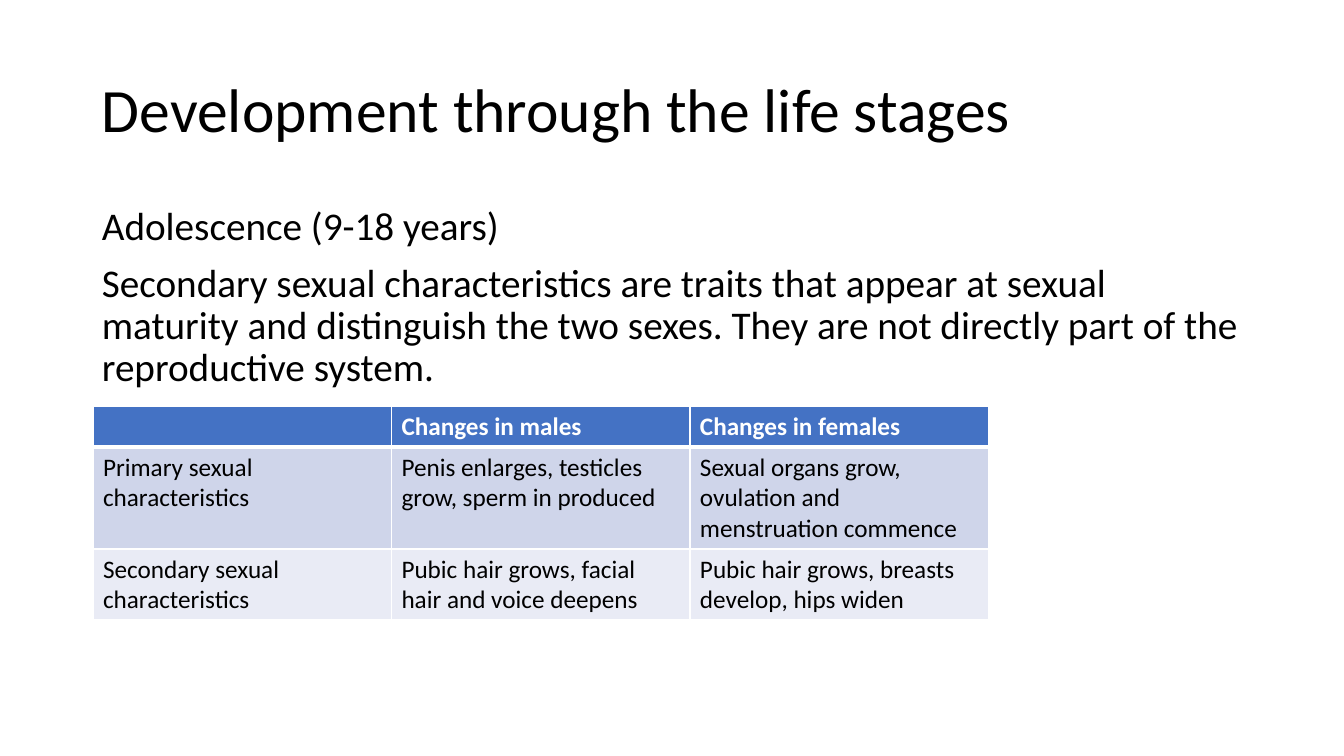
"""Build the slide on adolescence and the changes it brings."""
from dataclasses import dataclass

from lxml import etree
from pptx import Presentation
from pptx import util as u
from pptx.dml.color import RGBColor
from pptx.enum import text
from pptx.oxml.ns import qn


@dataclass(frozen=True)
class Theme:
    font: str = "Calibri"
    ink: str = "000000"
    white: str = "FFFFFF"
    header: str = "4472C4"
    bands: tuple = ("CFD5EA", "E9EBF5")
    title_size: int = 44
    body_size: int = 28
    table_size: int = 18


THEME = Theme()
PX = 914400 / 100.8


def style_text(frame, size, color, bold=False):
    for paragraph in frame.paragraphs:
        for run in paragraph.runs:
            run.font.name = THEME.font
            run.font.size = u.Pt(size)
            run.font.bold = bold
            run.font.color.rgb = RGBColor.from_string(color)


def add_border(cell, side, points):
    line = etree.Element(qn(f"a:{side}"), w=str(u.Pt(points)))
    fill = etree.SubElement(line, qn("a:solidFill"))
    etree.SubElement(fill, qn("a:srgbClr"), val=THEME.white)
    properties = cell._tc.get_or_add_tcPr()
    properties.insert(len(properties) - 1, line)


prs = Presentation()
prs.slide_width = round(1344 * PX)
prs.slide_height = round(756 * PX)
slide = prs.slides.add_slide(prs.slide_layouts[6])

passages = [
    (40, 146, THEME.title_size, 0, text.MSO_ANCHOR.MIDDLE,
     ["Development through the life stages"]),
    (202, 480, THEME.body_size, 10, text.MSO_ANCHOR.TOP,
     ["Adolescence (9-18 years)",
      "Secondary sexual characteristics are traits that appear at sexual "
      "maturity and distinguish the two sexes. They are not directly part "
      "of the reproductive system."]),
]
for top, height, size, space_before, anchor, paragraphs in passages:
    passage = slide.shapes.add_textbox(
        *(round(n * PX) for n in (92, top, 1159, height)))
    frame = passage.text_frame
    frame.word_wrap = True
    frame.vertical_anchor = anchor
    frame.text = "\n".join(paragraphs)
    for paragraph in frame.paragraphs:
        paragraph.line_spacing = 0.9
        paragraph.space_before = u.Pt(space_before)
    style_text(frame, size, THEME.ink)

changes = [
    ["", "Changes in males", "Changes in females"],
    ["Primary sexual characteristics",
     "Penis enlarges, testicles grow, sperm in produced",
     "Sexual organs grow, ovulation and menstruation commence"],
    ["Secondary sexual characteristics",
     "Pubic hair grows, facial hair and voice deepens",
     "Pubic hair grows, breasts develop, hips widen"],
]
row_heights = [41, 102, 71]
column_width = 298.5
changes_table = slide.shapes.add_table(
    3, 3, *(round(n * PX) for n in (93, 406, 3 * column_width, sum(row_heights)))).table
for column in changes_table.columns:
    column.width = round(column_width * PX)
for r, (row, height) in enumerate(zip(changes, row_heights)):
    changes_table.rows[r].height = round(height * PX)
    is_header = r == 0
    fill = THEME.header if is_header else THEME.bands[r - 1]
    for c, wording in enumerate(row):
        cell = changes_table.cell(r, c)
        cell.text_frame.text = wording
        style_text(cell.text_frame, THEME.table_size,
                   THEME.white if is_header else THEME.ink, is_header)
        cell.fill.solid()
        cell.fill.fore_color.rgb = RGBColor.from_string(fill)
        borders = {"lnL": 1, "lnR": 1, "lnT": 3 if r == 1 else 1,
                   "lnB": 3 if is_header else 1}
        for side, points in borders.items():
            add_border(cell, side, points)

prs.save("out.pptx")
